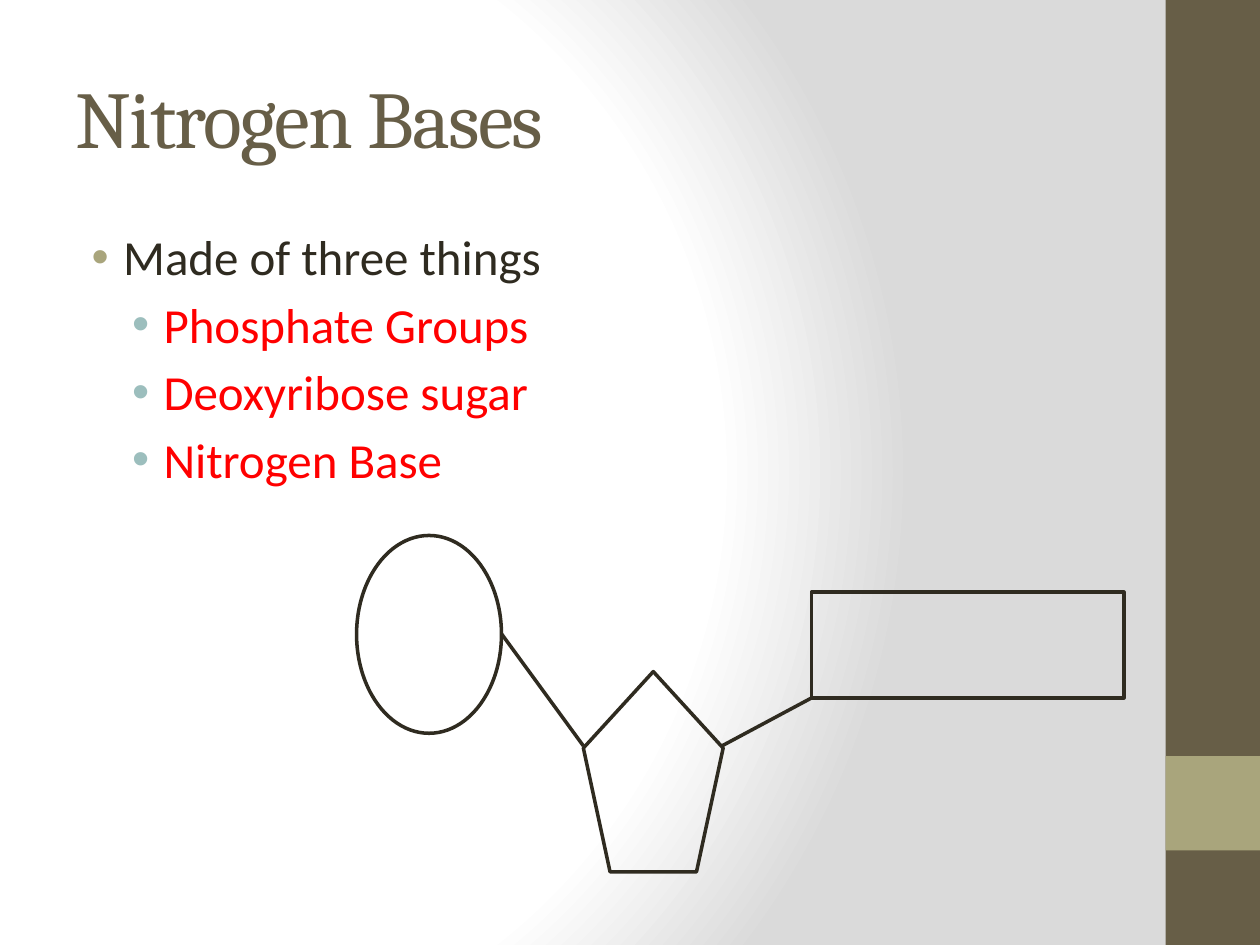
from lxml.etree import SubElement as Sub
from pptx import Presentation
from pptx.dml.color import RGBColor as RGB
from pptx.enum.shapes import MSO_CONNECTOR as Link, MSO_SHAPE as Kind
from pptx.enum.text import MSO_ANCHOR as Anchor, PP_ALIGN as Align
from pptx.oxml import parse_xml
from pptx.oxml.ns import nsdecls, qn
from pptx.util import Inches, Pt

BROWN = RGB(0x67, 0x5E, 0x47)
TAN = RGB(0xA9, 0xA5, 0x7C)
TEAL = RGB(0x9C, 0xBE, 0xBD)
DARK = RGB(0x2F, 0x2B, 0x20)
RED = RGB(0xFF, 0x00, 0x00)
WHITE = RGB(0xFF, 0xFF, 0xFF)
GREY = RGB(0xDA, 0xDA, 0xDA)


def style(item, **values):
    for name, value in values.items():
        setattr(item, name, value)


def place(item, left, top, width, height):
    style(item, left=Inches(left), top=Inches(top),
          width=Inches(width), height=Inches(height))


deck = Presentation()
style(deck, slide_width=Inches(10), slide_height=Inches(7.5))
slide = deck.slides.add_slide(deck.slide_layouts[5])
shapes = slide.shapes

slide.background.fill.solid()
back = slide.element.find(".//" + qn("p:bgPr"))
stops = "".join(
    f'<a:gs pos="{pos * 1000}"><a:srgbClr val="{tint}"/></a:gs>'
    for pos, tint in [(0, WHITE), (75, WHITE), (100, GREY)])
back.replace(back[0], parse_xml(
    f'<a:gradFill {nsdecls("a")} rotWithShape="1"><a:gsLst>{stops}</a:gsLst>'
    '<a:path path="circle"><a:fillToRect l="20000" t="50000" r="100000" b="50000"/>'
    '</a:path></a:gradFill>'))

for top, height, tint in [(0, 7.5, BROWN), (6, 0.75, TAN)]:
    bar = shapes.add_shape(Kind.RECTANGLE, Inches(9.25), Inches(top),
                           Inches(0.75), Inches(height))
    bar.shadow.inherit = False
    bar.fill.solid()
    bar.fill.fore_color.rgb = tint
    bar.line.fill.background()

title = shapes.title
place(title, 0.5, 0.3, 8.33, 1.25)
title.text_frame.text = "Nitrogen Bases"
title.text_frame.vertical_anchor = Anchor.MIDDLE
para = title.text_frame.paragraphs[0]
para.alignment = Align.LEFT
run = para.runs[0]
style(run.font, name="Cambria", size=Pt(46))
run.font.color.rgb = BROWN
run.font._element.set("spc", "-100")

body = shapes.add_textbox(Inches(0.5), Inches(1.75), Inches(8.33), Inches(5.25))
frame = body.text_frame
frame.word_wrap = True
lines = ["Made of three things", "Phosphate Groups",
         "Deoxyribose sugar", "Nitrogen Base"]
for row, text in enumerate(lines):
    para = frame.add_paragraph() if row else frame.paragraphs[0]
    style(para, level=min(row, 1), space_before=Pt(5))
    run = para.add_run()
    run.text = text
    style(run.font, name="Calibri", size=Pt(28))
    run.font.color.rgb = RED if row else DARK
    props = para._p.get_or_add_pPr()
    props.set("marL", str(Inches(0.7 if row else 0.38)))
    props.set("indent", str(Inches(-0.25)))
    tint = Sub(Sub(props, qn("a:buClr")), qn("a:srgbClr"))
    tint.set("val", str(TEAL if row else TAN))
    Sub(props, qn("a:buFont")).set("typeface", "Arial")
    Sub(props, qn("a:buChar")).set("char", "•")

group = shapes.add_group_shape().shapes
parts = [
    (Kind.OVAL, 2.83, 4.25, 1.15, 1.57),
    (Kind.REGULAR_PENTAGON, 4.63, 5.33, 1.11, 1.59),
    (Kind.RECTANGLE, 6.44, 4.7, 2.48, 0.84),
]
for kind, *box in parts:
    part = group.add_shape(kind, *map(Inches, box))
    part.shadow.inherit = False
    part.fill.background()
    part.line.width = Pt(2)
    part.line.color.rgb = DARK

for ends in [(4.63, 5.92, 3.98, 5.03), (5.73, 5.92, 6.44, 5.54)]:
    bond = group.add_connector(Link.STRAIGHT, *map(Inches, ends))
    bond.line.width = Pt(2)
    bond.line.color.rgb = DARK
    Sub(bond._element.spPr, qn("a:effectLst"))

deck.save("out.pptx")
